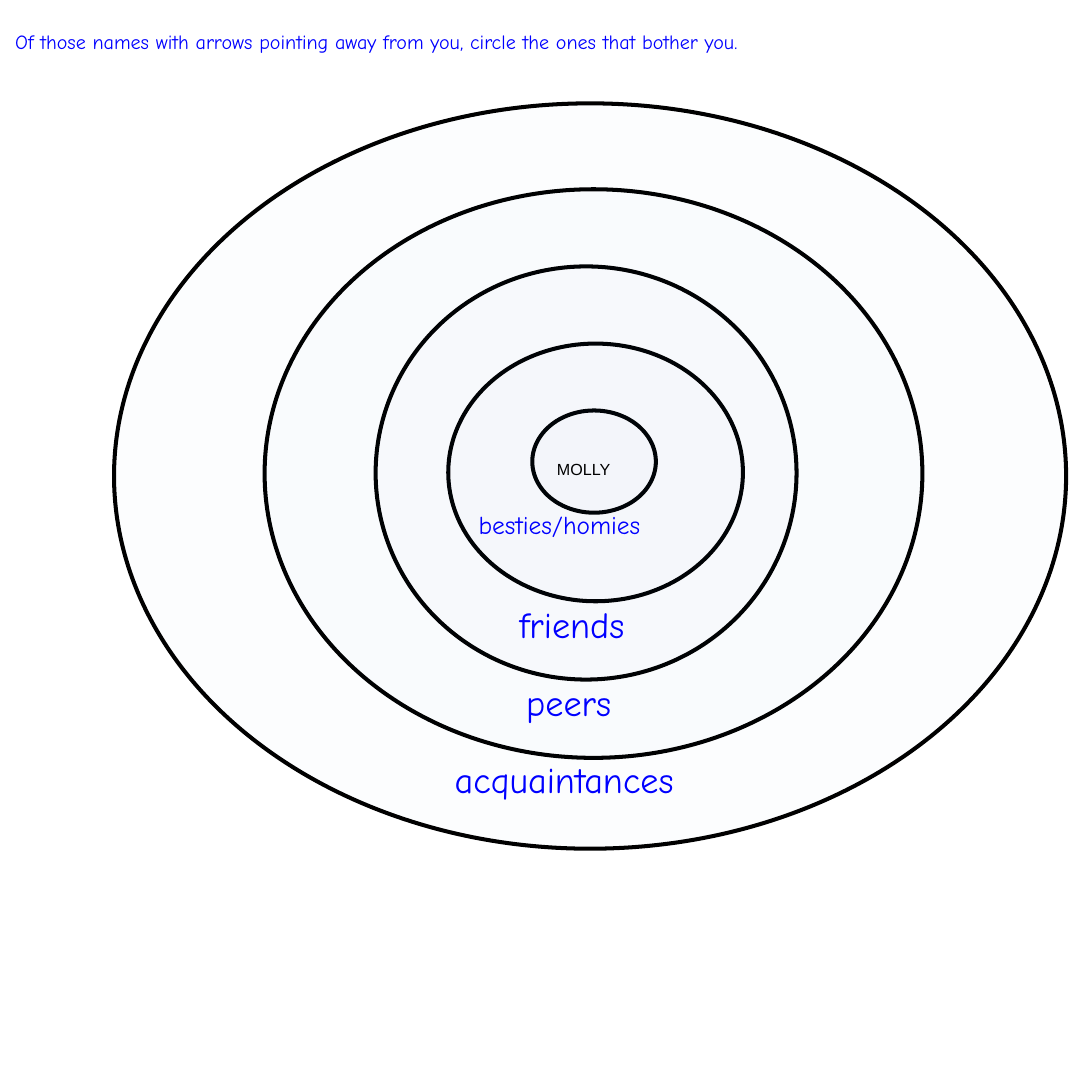
import lxml.etree
import pptx
import pptx.dml.color
import pptx.enum.shapes
import pptx.enum.text
import pptx.oxml.ns
import pptx.util

BLACK = pptx.dml.color.RGBColor(0x00, 0x00, 0x00)
BLUE = pptx.dml.color.RGBColor(0x00, 0x00, 0xFF)
TINT = pptx.dml.color.RGBColor(0x4F, 0x81, 0xBD)
SCRIPT = "Comic Neue"

RINGS = [
    (14, 10.8, 3.25, 2.69),
    (11.79, 9.04, 7.75, 6.78),
    (9.88, 7.01, 11.07, 10.87),
    (6.96, 4.98, 17.3, 14.96),
    (3, 2.72, 25.04, 19.61),
]

LABELS = [
    ("MOLLY", (14.4, 11.96, 2.74, 0.76), 12, "Arial", BLACK),
    ("friends", (13.41, 15.72, 5.87, 1.42), 27, SCRIPT, BLUE),
    ("peers", (13.59, 17.78, 4.88, 1.42), 27, SCRIPT, BLUE),
    ("acquaintances", (11.71, 19.79, 9.68, 1.42), 27, SCRIPT, BLUE),
    ("besties/homies", (12.34, 13.26, 7.7, 1.07), 19, SCRIPT, BLUE),
]


def to_cm(box):
    return [pptx.util.Cm(length) for length in box]


def add_ring(slide, box):
    oval = pptx.enum.shapes.MSO_SHAPE.OVAL
    ring = slide.shapes.add_shape(oval, *to_cm(box))
    ring.shadow.inherit = False
    ring.fill.solid()
    ring.fill.fore_color.rgb = TINT
    tag = pptx.oxml.ns.qn("a:srgbClr")
    color = ring.fill._xPr.find(".//" + tag)
    alpha = lxml.etree.SubElement(color, pptx.oxml.ns.qn("a:alpha"))
    alpha.set("val", "1000")
    ring.line.color.rgb = BLACK
    ring.line.width = pptx.util.Pt(3)


def add_label(slide, text, box, size, face, color):
    frame = slide.shapes.add_textbox(*to_cm(box)).text_frame
    frame.word_wrap = True
    frame.auto_size = pptx.enum.text.MSO_AUTO_SIZE.SHAPE_TO_FIT_TEXT
    frame.text = text
    font = frame.paragraphs[0].runs[0].font
    font.name = face
    font.size = pptx.util.Pt(size)
    font.color.rgb = color


def main():
    deck = pptx.Presentation()
    deck.slide_width = pptx.util.Cm(28.22)
    deck.slide_height = pptx.util.Cm(28.73)
    slide = deck.slides.add_slide(deck.slide_layouts[6])
    prompt = ("Of those names with arrows pointing away from you, "
              "circle the ones that bother you.")
    add_label(slide, prompt, (0.15, 0.64, 28, 0.89), 15, SCRIPT, BLUE)
    for box in RINGS:
        add_ring(slide, box)
    for label in LABELS:
        add_label(slide, *label)
    deck.save("out.pptx")


if __name__ == "__main__":
    main()
